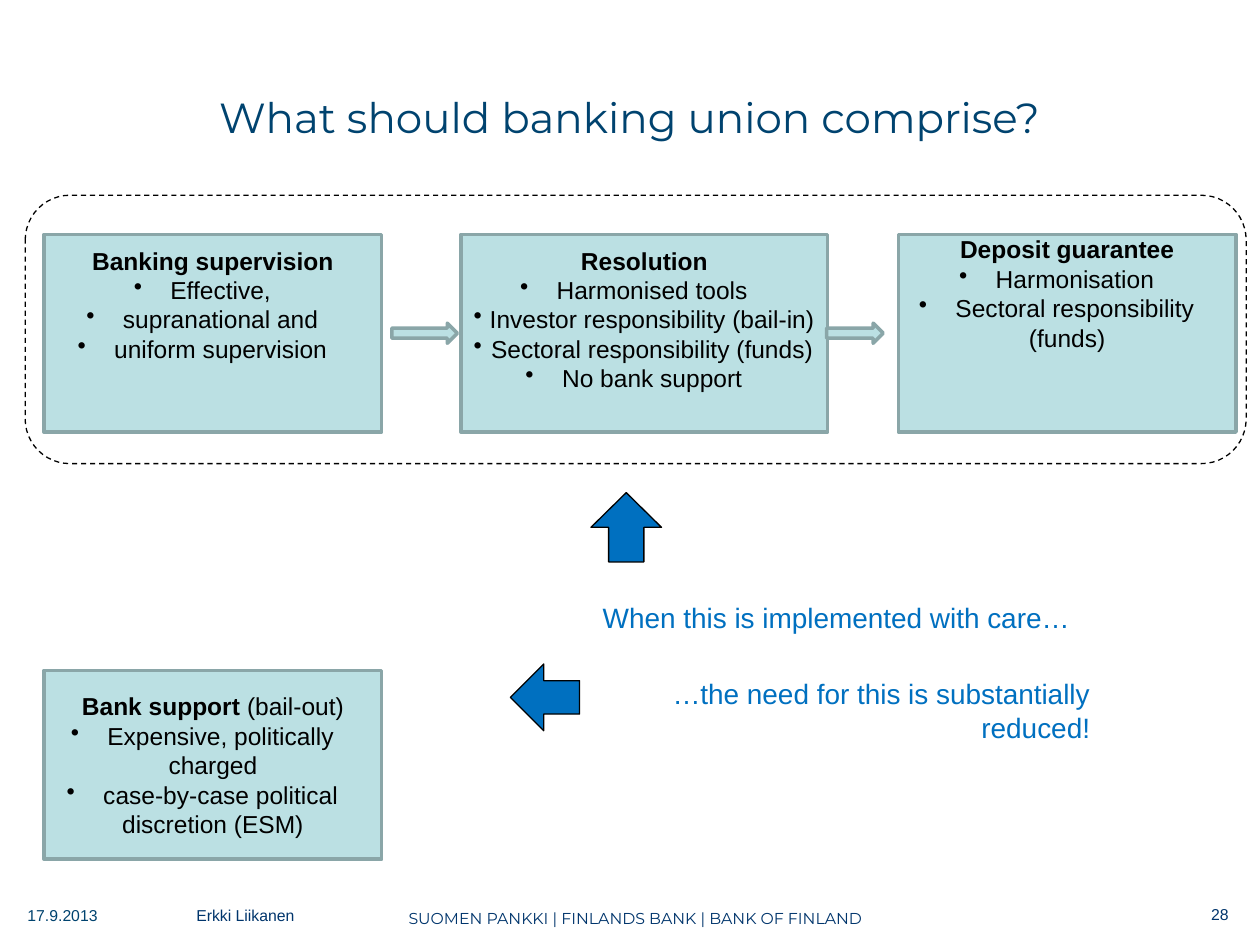
from pptx import Presentation
from pptx.dml.color import RGBColor
from pptx.enum.dml import MSO_LINE
from pptx.enum.shapes import MSO_SHAPE
from pptx.enum.text import MSO_ANCHOR, PP_ALIGN
from pptx.oxml.ns import qn
from pptx.util import Inches, Pt
from lxml.etree import SubElement

# The grid has 100 columns and 75 rows, each a tenth of an inch.
CELL = 0.1
COLS, ROWS = 100, 75
NAVY, DEEP, BLUE = "00436F", "00356C", "0070C0"
PALE, EDGE, BLACK = "BBE0E3", "8AA6A8", "000000"
LEFT, MID, RIGHT = PP_ALIGN.LEFT, PP_ALIGN.CENTER, PP_ALIGN.RIGHT


def hue(code):
    return RGBColor.from_string(code)


def span(box):
    return [Inches(n * CELL) for n in box]


def shift(box, x, y, w, h):
    """Place a part, given in cells, from the corner of its region."""
    return box[0] + x, box[1] + y, w, h


def add_run(para, text, size, color, font="Arial", bold=False):
    run = para.add_run()
    run.text = text
    run.font.name, run.font.size, run.font.bold = font, Pt(size), bold
    run.font.color.rgb = hue(color)


def label(slide, box, text, size, color, align, font="Arial", anchor=MSO_ANCHOR.TOP):
    frame = slide.shapes.add_textbox(*span(box)).text_frame
    frame.word_wrap = True
    frame.vertical_anchor = anchor
    para = frame.paragraphs[0]
    para.alignment = align
    add_run(para, text, size, color, font)


def shape(slide, kind, box, fill, edge, width):
    item = slide.shapes.add_shape(kind, *span(box))
    item.shadow.inherit = False
    if fill:
        item.fill.solid()
        item.fill.fore_color.rgb = hue(fill)
    else:
        item.fill.background()
    item.line.color.rgb = hue(edge)
    item.line.width = Pt(width)
    return item


def card(slide, box, head, points, note="", pad=None):
    """Draw a titled list; pad is the inset from the top, or None to centre it."""
    frame = shape(slide, MSO_SHAPE.RECTANGLE, box, PALE, EDGE, 2).text_frame
    frame.word_wrap = True
    frame.vertical_anchor = MSO_ANCHOR.MIDDLE
    if pad is not None:
        frame.vertical_anchor = MSO_ANCHOR.TOP
        frame.margin_top = Inches(pad * CELL)
    para = frame.paragraphs[0]
    para.alignment = MID
    add_run(para, head, 14, BLACK, bold=True)
    if note:
        add_run(para, note, 14, BLACK)
    for point in points:
        para = frame.add_paragraph()
        para.alignment = MID
        SubElement(para._p.get_or_add_pPr(), qn("a:buChar")).set("char", "•")
        add_run(para, " " + point, 14, BLACK)


def union(slide, box):
    top, tall = 3.1, 15.7
    cards = [
        (1.5, 26.8, 0.9, "Banking supervision",
         ["Effective,", "supranational and", "uniform supervision"]),
        (34.6, 29.1, 0.9, "Resolution",
         ["Harmonised tools", "Investor responsibility (bail-in) ",
          "Sectoral responsibility (funds)", "No bank support"]),
        (69.3, 26.8, 0, "Deposit guarantee",
         ["Harmonisation", "Sectoral responsibility (funds)"]),
    ]
    for x, wide, pad, head, points in cards:
        card(slide, shift(box, x, top, wide, tall), head, points, pad=pad)
    thick = 1.6
    for x, wide in ((29.1, 5.2), (63.6, 4.5)):
        spot = shift(box, x, top + (tall - thick) / 2, wide, thick)
        shape(slide, MSO_SHAPE.RIGHT_ARROW, spot, PALE, EDGE, 2)
    frame = shape(slide, MSO_SHAPE.ROUNDED_RECTANGLE, box, None, BLACK, 0.75)
    frame.line.dash_style = MSO_LINE.DASH


def effect(slide, box):
    """Draw the two remarks and the arrows that tie them to the boxes."""
    arrows = [((6.3, 0, 5.6, 5.5), 180), ((0, 13.5, 5.3, 5.5), 90)]
    for part, turn in arrows:
        arrow = shape(slide, MSO_SHAPE.DOWN_ARROW, shift(box, *part), BLUE, BLACK, 0.75)
        arrow.rotation = turn
    notes = [
        ((1.5, 8.1, 43.8, 3.7), "When this is implemented with care…"),
        ((6.3, 14.1, 40.6, 6.4), "…the need for this is substantially reduced!"),
    ]
    for part, text in notes:
        label(slide, shift(box, *part), text, 16, BLUE, RIGHT)


def footer(slide, box):
    label(slide, shift(box, 5.8, 0.3, 89.2, 2.8),
          "SUOMEN PANKKI | FINLANDS BANK | BANK OF FINLAND", 9, DEEP, MID, "Montserrat")
    label(slide, shift(box, 1.2, 0.1, 12.6, 3.6), "17.9.2013", 9, NAVY, LEFT)
    label(slide, shift(box, 14.6, 0.1, 15.7, 3.6), "Erkki Liikanen", 9, DEEP, LEFT)
    label(slide, shift(box, 87.8, 0, 10.7, 3.1), "28", 9, DEEP, RIGHT)


def main():
    deck = Presentation()
    deck.slide_width, deck.slide_height = Inches(COLS * CELL), Inches(ROWS * CELL)
    slide = deck.slides.add_slide(deck.slide_layouts[6])
    label(slide, (5.8, 3, 88.3, 12.5), "What should banking union comprise?",
          24, NAVY, MID, "Montserrat", MSO_ANCHOR.MIDDLE)
    union(slide, (2, 15.5, 96.9, 21.3))
    card(slide, (3.5, 53.2, 26.8, 15), "Bank support",
         ["Expensive, politically charged", "case-by-case political discretion (ESM)"],
         note=" (bail-out)")
    effect(slide, (40.6, 39.1, 46.9, 20.5))
    footer(slide, (0, 71.3, COLS, 3.7))
    deck.save("out.pptx")


if __name__ == "__main__":
    main()
